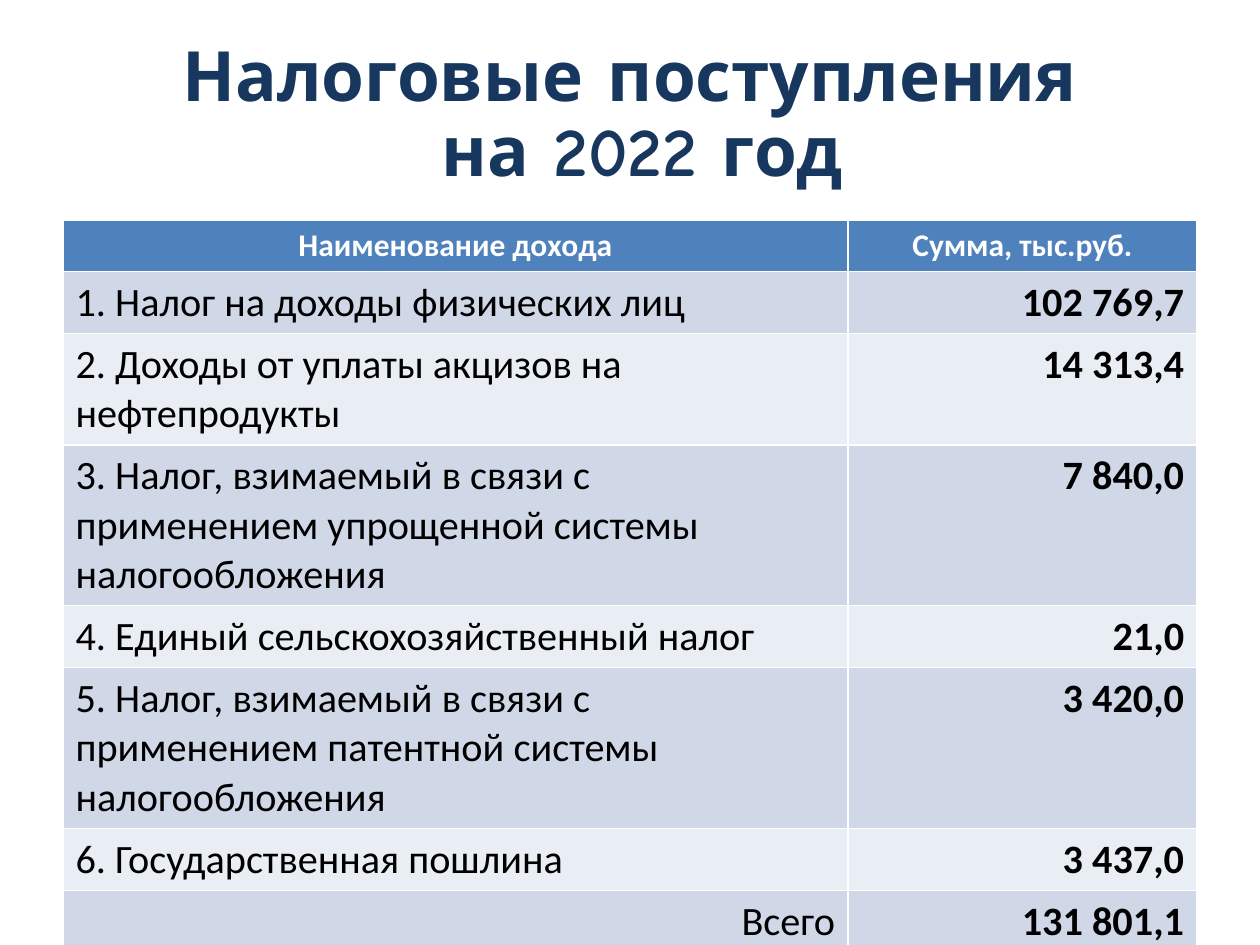
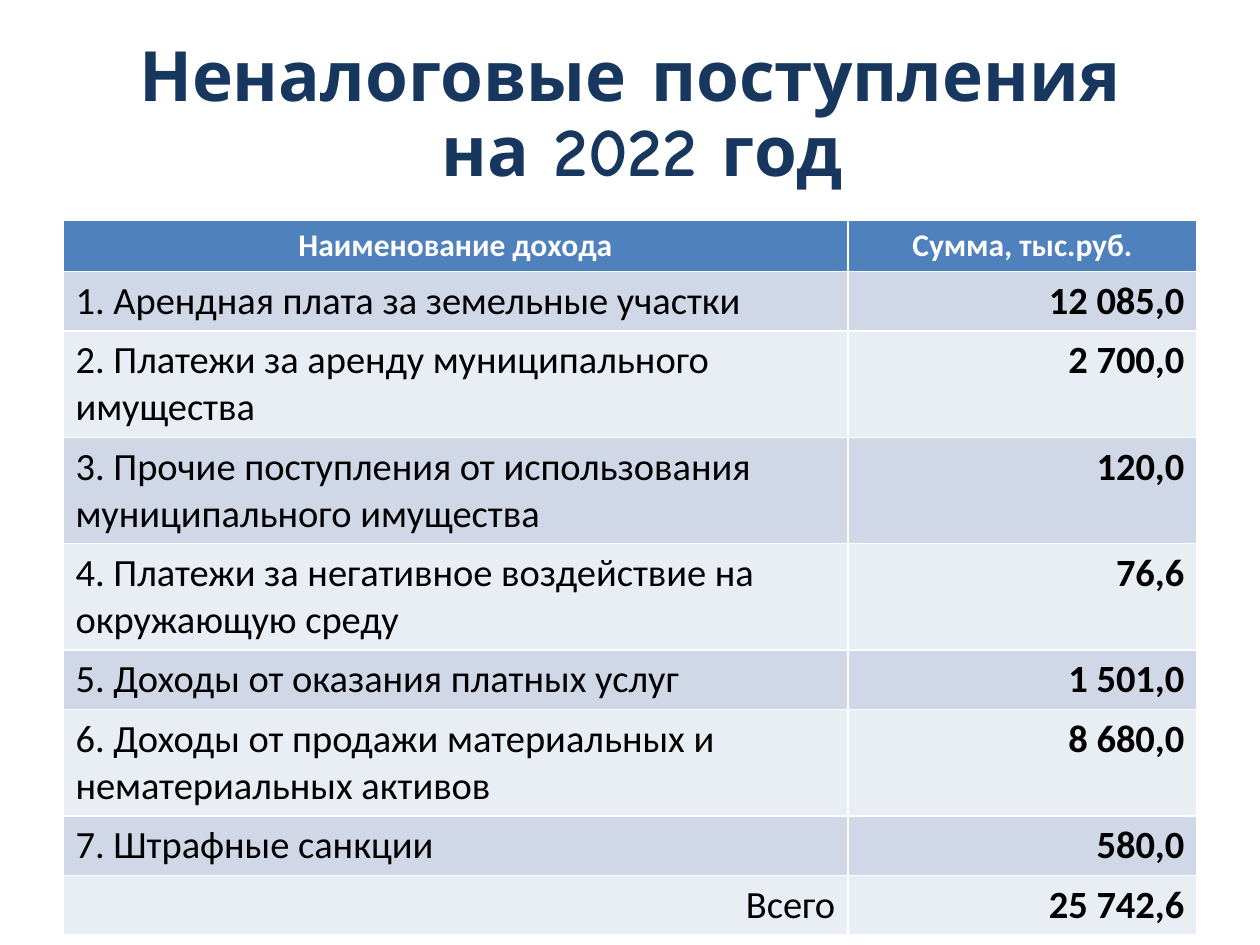
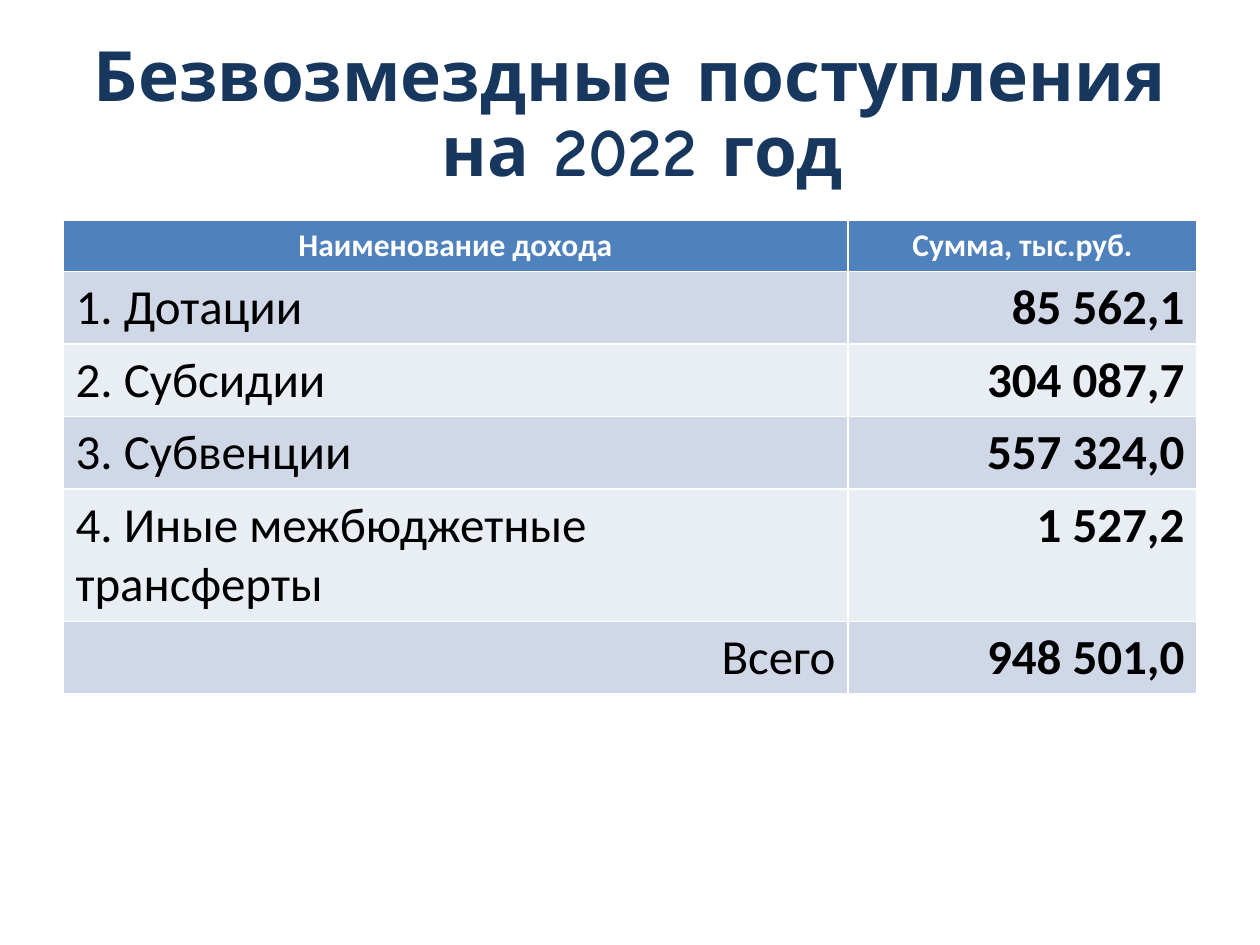
"""Budget revenue tables for 2022, one slide per kind of revenue."""
from pptx import Presentation
from pptx.dml.color import RGBColor
from pptx.enum.text import MSO_ANCHOR, MSO_AUTO_SIZE, PP_ALIGN
from pptx.util import Pt

LEFT, MID, RIGHT = PP_ALIGN.LEFT, PP_ALIGN.CENTER, PP_ALIGN.RIGHT
MIDDLE = MSO_ANCHOR.MIDDLE
NO_FIT = MSO_AUTO_SIZE.NONE

NAVY = RGBColor(0x17, 0x37, 0x5E)
BLUE = RGBColor(0x4F, 0x81, 0xBD)
DARK = RGBColor(0xD0, 0xD8, 0xE8)
PALE = RGBColor(0xE9, 0xED, 0xF4)
WHITE = RGBColor(0xFF, 0xFF, 0xFF)
BLACK = RGBColor(0x00, 0x00, 0x00)

TITLE_FONT, BODY_FONT = "Comic Neue", "Calibri"
EDGE, WIDTH = Pt(36), Pt(648)
COLS = (Pt(448.5), Pt(199.5))
ROW = Pt(29.2)
HEAD = ("Наименование дохода", "Сумма, тыс.руб.")
TOTAL = "Всего"

SLIDES = [
    ("Налоговые", 23, [
        ("1. Налог на доходы физических лиц", "102 769,7"),
        ("2. Доходы от уплаты акцизов на нефтепродукты", "14 313,4"),
        ("3. Налог, взимаемый в связи с применением упрощенной системы "
         "налогообложения", "7 840,0"),
        ("4. Единый сельскохозяйственный налог", "21,0"),
        ("5. Налог, взимаемый в связи с применением патентной системы "
         "налогообложения", "3 420,0"),
        ("6. Государственная пошлина", "3 437,0"),
        (TOTAL, "131 801,1"),
    ]),
    ("Неналоговые", 22, [
        ("1. Арендная плата за земельные участки", "12 085,0"),
        ("2. Платежи за аренду муниципального имущества", "2 700,0"),
        ("3. Прочие поступления от использования муниципального имущества",
         "120,0"),
        ("4. Платежи за негативное воздействие на окружающую среду", "76,6"),
        ("5. Доходы от оказания платных услуг", "1 501,0"),
        ("6. Доходы от продажи материальных и нематериальных активов",
         "8 680,0"),
        ("7. Штрафные санкции", "580,0"),
        (TOTAL, "25 742,6"),
    ]),
    ("Безвозмездные", 28, [
        ("1. Дотации", "85 562,1"),
        ("2. Субсидии", "304 087,7"),
        ("3. Субвенции", "557 324,0"),
        ("4. Иные межбюджетные трансферты", "1 527,2"),
        (TOTAL, "948 501,0"),
    ]),
]


def style(para, name, size, color, bold, align):
    para.alignment = align
    font = para.font
    font.name, font.size, font.bold = name, Pt(size), bold
    font.color.rgb = color


def add_title(slide, kind):
    title = slide.shapes.title
    title.left, title.top, title.width, title.height = EDGE, Pt(21.6), WIDTH, Pt(90)
    frame = title.text_frame
    frame.auto_size, frame.vertical_anchor = NO_FIT, MIDDLE
    frame.text = f"{kind} поступления\v на 2022 год"
    para = frame.paragraphs[0]
    para.line_spacing = 0.9
    style(para, TITLE_FONT, 39.6, NAVY, True, MID)


def fill_cell(cell, text, fill, size, color, bold, align):
    cell.fill.solid()
    cell.fill.fore_color.rgb = fill
    cell.text = text
    style(cell.text_frame.paragraphs[0], BODY_FONT, size, color, bold, align)


def add_grid(slide, size, rows):
    count = len(rows) + 1
    grid = slide.shapes.add_table(
        count, len(COLS), EDGE, Pt(126), WIDTH, ROW * count).table
    for col, width in zip(grid.columns, COLS):
        col.width = width
    for col, text in enumerate(HEAD):
        fill_cell(grid.cell(0, col), text, BLUE, 18, WHITE, True, MID)
    for row, (name, value) in enumerate(rows, 1):
        fill = DARK if row % 2 else PALE
        align = RIGHT if name == TOTAL else LEFT
        fill_cell(grid.cell(row, 0), name, fill, size, BLACK, False, align)
        fill_cell(grid.cell(row, 1), value, fill, size, BLACK, True, RIGHT)


def main():
    deck = Presentation()
    deck.slide_width, deck.slide_height = Pt(720), Pt(540)
    for kind, size, rows in SLIDES:
        slide = deck.slides.add_slide(deck.slide_layouts[5])
        add_title(slide, kind)
        add_grid(slide, size, rows)
    deck.save("out.pptx")


if __name__ == "__main__":
    main()
